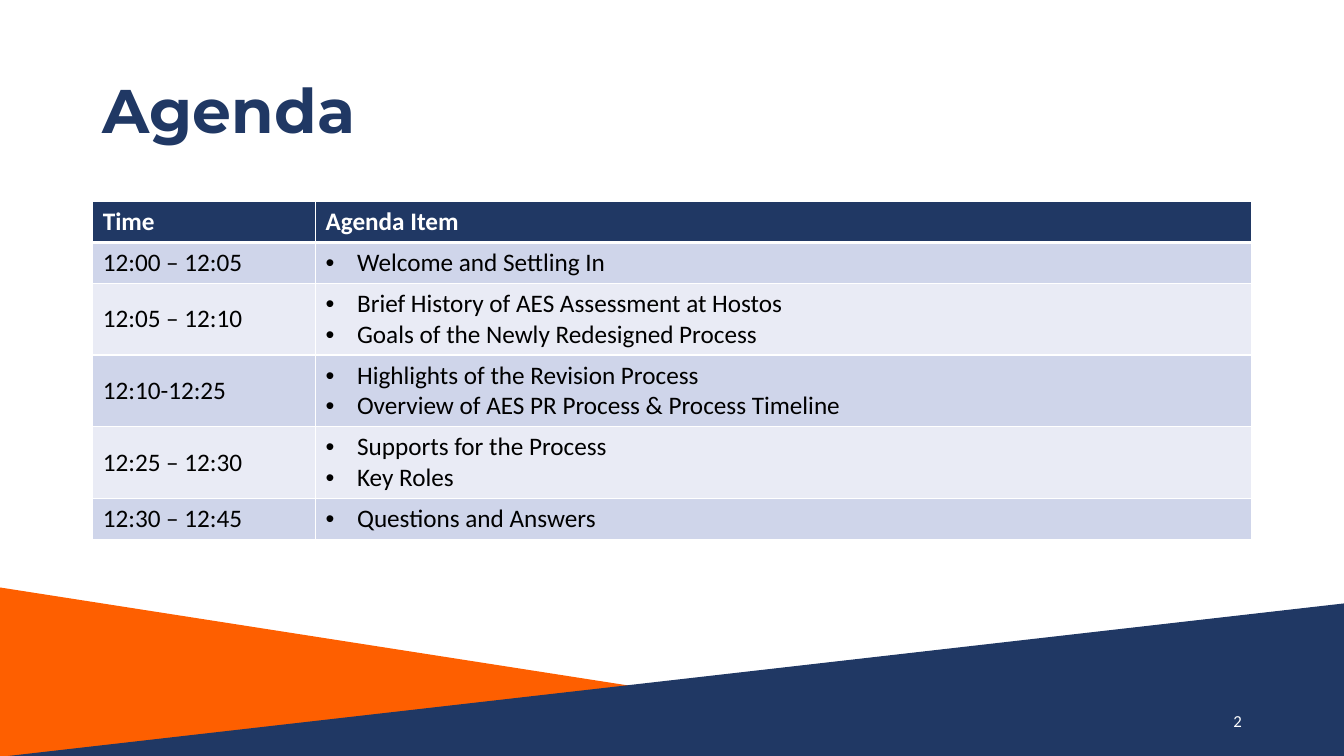
from dataclasses import dataclass

from lxml import etree
from pptx import Presentation
from pptx.dml.color import RGBColor
from pptx.enum.shapes import MSO_SHAPE
from pptx.enum.text import MSO_ANCHOR, MSO_AUTO_SIZE, PP_ALIGN
from pptx.oxml.ns import qn
from pptx.util import Pt

TRIANGLE = MSO_SHAPE.ISOSCELES_TRIANGLE
MIDDLE, TOP = MSO_ANCHOR.MIDDLE, MSO_ANCHOR.TOP
LEFT, RIGHT = PP_ALIGN.LEFT, PP_ALIGN.RIGHT
NO_AUTOFIT = MSO_AUTO_SIZE.NONE


@dataclass(frozen=True)
class Theme:
    navy: str = "203864"
    orange: str = "FE5F00"
    white: str = "FFFFFF"
    black: str = "000000"
    bands: tuple[str, str] = ("CFD5EA", "E9EBF5")
    heading_font: str = "Montserrat"
    body_font: str = "Calibri"
    title_size: float = 44
    table_size: float = 18
    number_size: float = 12


@dataclass(frozen=True)
class Wedge:
    left: float
    top: float
    width: float
    height: float
    color: str
    flipped: bool = False


@dataclass(frozen=True)
class Session:
    time: str
    topics: tuple[str, ...]


THEME = Theme()
MARGIN, CONTENT_WIDTH = 66.24, 828
TIME_WIDTH = 159.12
LINE_HEIGHT, ROW_PADDING = 22, 7.2
BULLET_INDENT = 22.5

WEDGES = (
    Wedge(-3.6, 419.04, 775.44, 120.96, THEME.orange, flipped=True),
    Wedge(5.76, 430.56, 958.32, 109.44, THEME.navy),
)
HEADINGS = ("Time", "Agenda Item")
SESSIONS = (
    Session("12:00 – 12:05", ("Welcome and Settling In",)),
    Session("12:05 – 12:10", ("Brief History of AES Assessment at Hostos",
                              "Goals of the Newly Redesigned Process")),
    Session("12:10-12:25", ("Highlights of the Revision Process",
                            "Overview of AES PR Process & Process Timeline")),
    Session("12:25 – 12:30", ("Supports for the Process", "Key Roles")),
    Session("12:30 – 12:45", ("Questions and Answers",)),
)


def write(frame, *lines: str, size: float = THEME.table_size, color: str = THEME.black,
          font: str = THEME.body_font, bold: bool = False, align=LEFT,
          bullet: bool = False, spacing: float = 1.0) -> None:
    """Fill a text frame with one paragraph per line."""
    for index, line in enumerate(lines):
        paragraph = frame.add_paragraph() if index else frame.paragraphs[0]
        paragraph.alignment = align
        paragraph.line_spacing = spacing
        if bullet:
            properties = paragraph._p.get_or_add_pPr()
            properties.set("marL", str(Pt(BULLET_INDENT)))
            properties.set("indent", str(-Pt(BULLET_INDENT)))
            etree.SubElement(properties, qn("a:buFont"), typeface="Arial")
            etree.SubElement(properties, qn("a:buChar"), char="•")
        run = paragraph.add_run()
        run.text = line
        run.font.name = font
        run.font.size = Pt(size)
        run.font.bold = bold
        run.font.color.rgb = RGBColor.from_string(color)


def draw_wedge(slide, wedge: Wedge) -> None:
    shape = slide.shapes.add_shape(TRIANGLE, Pt(wedge.left), Pt(wedge.top),
                                   Pt(wedge.width), Pt(wedge.height))
    shape.adjustments[0] = 1
    shape.shadow.inherit = False
    shape.fill.solid()
    shape.fill.fore_color.rgb = RGBColor.from_string(wedge.color)
    shape.line.fill.background()
    if wedge.flipped:
        shape._element.spPr.xfrm.set("flipH", "1")


def style_cell(cell, fill: str, top: float = 1, bottom: float = 1, anchor=TOP) -> None:
    """Give a cell white rules, a fill and an anchor."""
    properties = cell._tc.get_or_add_tcPr()
    for side, weight in (("L", 1), ("R", 1), ("T", top), ("B", bottom)):
        rule = etree.SubElement(properties, qn(f"a:ln{side}"), w=str(Pt(weight)))
        rule_fill = etree.SubElement(rule, qn("a:solidFill"))
        etree.SubElement(rule_fill, qn("a:srgbClr"), val=THEME.white)
    cell.fill.solid()
    cell.fill.fore_color.rgb = RGBColor.from_string(fill)
    cell.vertical_anchor = anchor


def draw_agenda(slide) -> None:
    line_counts = [1] + [len(session.topics) for session in SESSIONS]
    heights = [count * LINE_HEIGHT + ROW_PADDING for count in line_counts]
    agenda = slide.shapes.add_table(len(heights), len(HEADINGS), Pt(MARGIN), Pt(144),
                                    Pt(CONTENT_WIDTH), Pt(sum(heights))).table
    agenda.columns[0].width = Pt(TIME_WIDTH)
    agenda.columns[1].width = Pt(CONTENT_WIDTH - TIME_WIDTH)
    for row, height in zip(agenda.rows, heights):
        row.height = Pt(height)

    # Header row
    for column, heading in enumerate(HEADINGS):
        cell = agenda.cell(0, column)
        style_cell(cell, THEME.navy, bottom=3)
        write(cell.text_frame, heading, color=THEME.white, bold=True)

    # Session rows
    for index, session in enumerate(SESSIONS):
        time_cell, topics_cell = agenda.rows[index + 1].cells
        band = THEME.bands[index % 2]
        top = 1 if index else 3
        style_cell(time_cell, band, top=top, anchor=MIDDLE)
        style_cell(topics_cell, band, top=top)
        write(time_cell.text_frame, session.time)
        write(topics_cell.text_frame, *session.topics, bullet=True)


def main() -> None:
    deck = Presentation()
    deck.slide_width, deck.slide_height = Pt(960), Pt(540)
    slide = deck.slides.add_slide(deck.slide_layouts[5])

    # Corner wedges
    for wedge in WEDGES:
        draw_wedge(slide, wedge)

    # Title
    title = slide.shapes.title
    title.left, title.top = Pt(MARGIN), Pt(28.8)
    title.width, title.height = Pt(CONTENT_WIDTH), Pt(104.4)
    title.text_frame.auto_size = NO_AUTOFIT
    title.text_frame.vertical_anchor = MIDDLE
    write(title.text_frame, "Agenda", size=THEME.title_size, color=THEME.navy,
          font=THEME.heading_font, bold=True, spacing=0.9)

    # Agenda table
    draw_agenda(slide)

    # Slide number
    number = slide.shapes.add_textbox(Pt(678.24), Pt(500.4), Pt(216), Pt(28.8)).text_frame
    number.word_wrap = True
    number.vertical_anchor = MIDDLE
    write(number, "2", size=THEME.number_size, color=THEME.white, align=RIGHT)

    deck.save("out.pptx")


if __name__ == "__main__":
    main()
